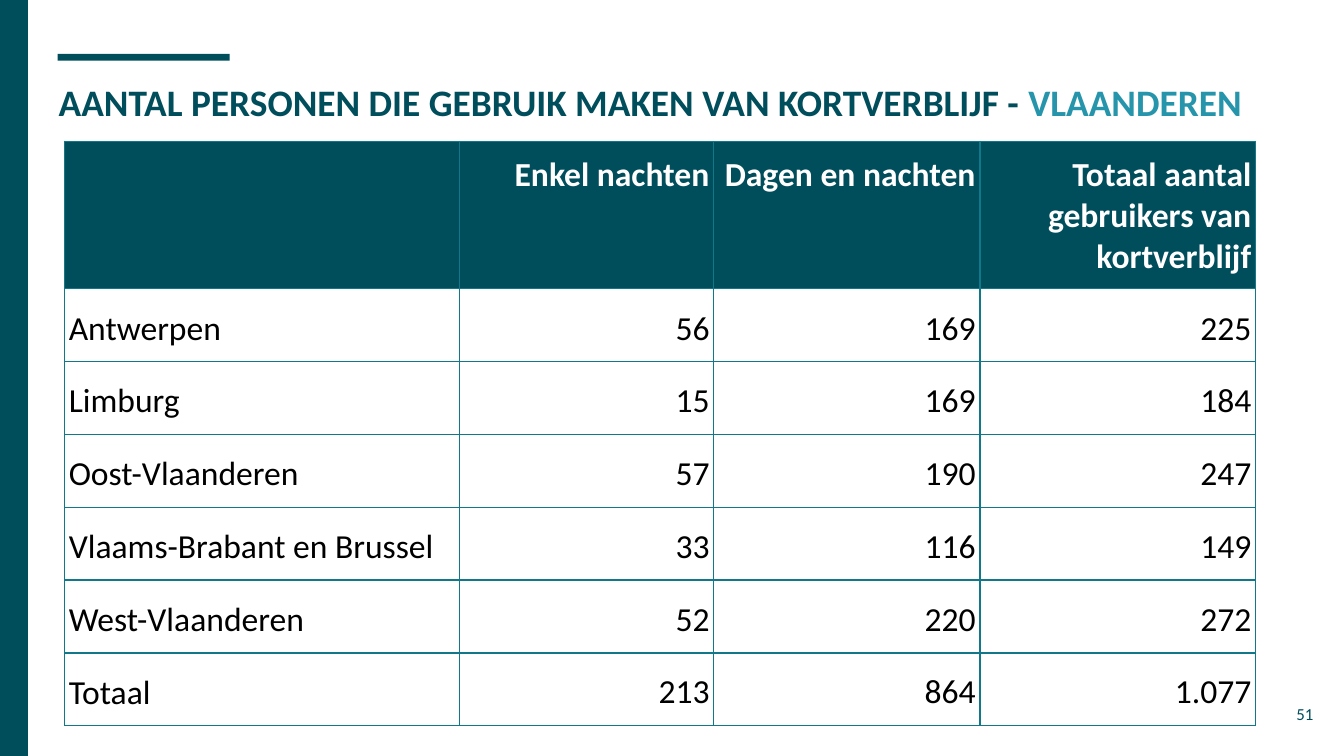
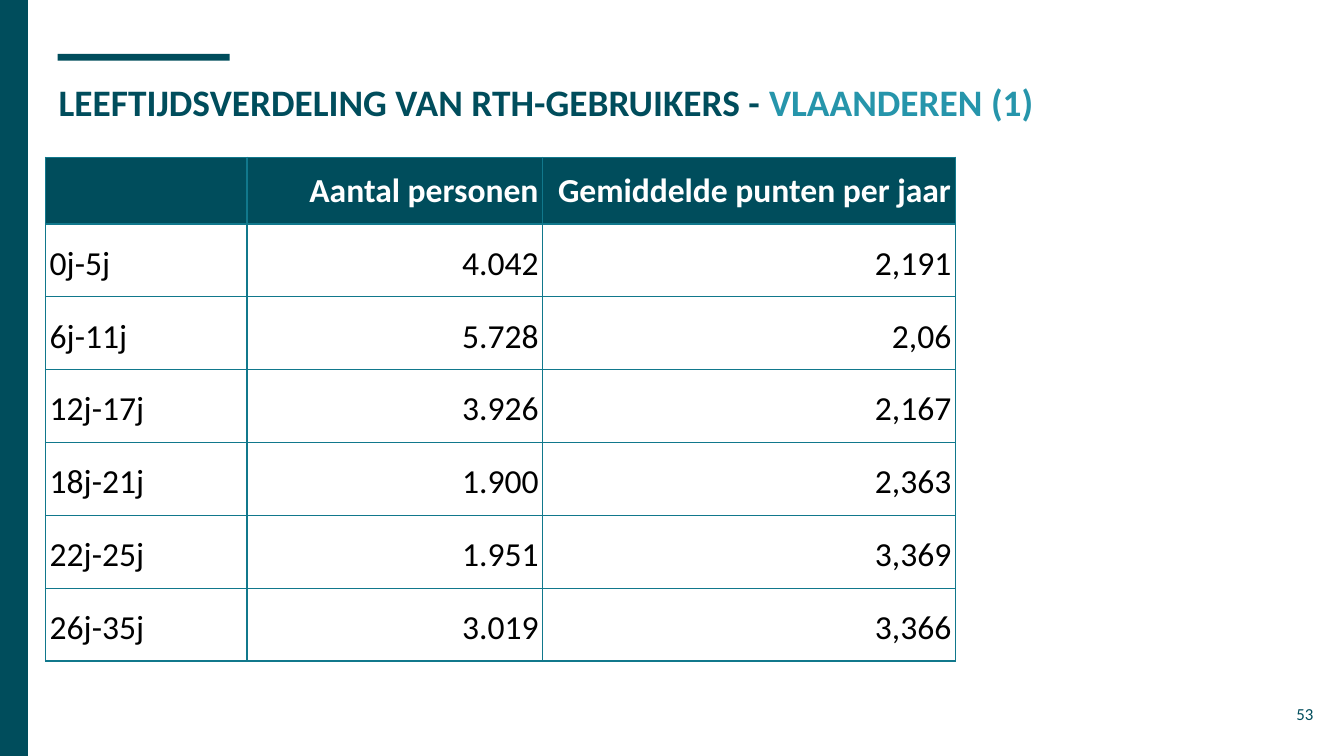
import dataclasses

import lxml.etree
import pptx
import pptx.dml.color
import pptx.enum.shapes
import pptx.enum.text
import pptx.oxml.ns
import pptx.util

Cm = pptx.util.Cm
Pt = pptx.util.Pt
Align = pptx.enum.text.PP_ALIGN
Anchor = pptx.enum.text.MSO_ANCHOR


def colour(code):
    return pptx.dml.color.RGBColor.from_string(code)


@dataclasses.dataclass(frozen=True)
class Theme:
    font: str = "Calibri"
    dark: str = "004D5C"
    accent: str = "2695AB"
    border: str = "11788C"
    white: str = "FFFFFF"
    black: str = "000000"
    title_size: int = 20
    table_size: int = 18
    number_size: int = 9
    border_width: float = 0.75
    line_spacing: float = 1.15


@dataclasses.dataclass(frozen=True)
class Box:
    left: float
    top: float
    width: float
    height: float

    def lengths(self):
        return Cm(self.left), Cm(self.top), Cm(self.width), Cm(self.height)


THEME = Theme()
PAGE = Box(0, 0, 25.4, 14.29)
TITLE_BOX = Box(0.86, 1.24, 23.67, 2.11)
NUMBER_BOX = Box(23.55, 12.95, 1.52, 1.09)


def style_font(font, size, code, bold=False):
    font.name = THEME.font
    font.size = Pt(size)
    font.bold = bold
    font.color.rgb = colour(code)


def add_bar(page, box):
    bar = page.shapes.add_shape(
        pptx.enum.shapes.MSO_SHAPE.RECTANGLE, *box.lengths())
    bar.shadow.inherit = False
    bar.fill.solid()
    bar.fill.fore_color.rgb = colour(THEME.dark)
    bar.line.fill.background()


def add_text_frame(page, box, anchor):
    frame = page.shapes.add_textbox(*box.lengths()).text_frame
    frame.word_wrap = True
    frame.vertical_anchor = anchor
    frame.margin_left = frame.margin_right = Cm(0.25)
    frame.margin_top = frame.margin_bottom = Cm(0.25)
    return frame


def add_decoration(page, box):
    # Short rule above the title, then the band on the left edge
    add_bar(page, Box(box.left + 1.09, box.top + 1.02, 3.25, 0.13))
    add_bar(page, Box(box.left, box.top, 0.53, box.height))


def add_title(page, box, subject, region):
    para = add_text_frame(page, box, Anchor.TOP).paragraphs[0]
    for text, code in ((subject + " - ", THEME.dark), (region, THEME.accent)):
        span = para.add_run()
        span.text = text
        style_font(span.font, THEME.title_size, code, bold=True)


def add_page_number(page, box, number):
    para = add_text_frame(page, box, Anchor.MIDDLE).paragraphs[0]
    para.text = str(number)
    para.alignment = Align.RIGHT
    style_font(para.font, THEME.number_size, THEME.dark)


def add_borders(cell):
    properties = cell._tc.get_or_add_tcPr()
    for position, side in enumerate(("a:lnL", "a:lnR", "a:lnT", "a:lnB")):
        line = lxml.etree.Element(
            pptx.oxml.ns.qn(side), w=str(Pt(THEME.border_width)))
        fill = lxml.etree.SubElement(line, pptx.oxml.ns.qn("a:solidFill"))
        lxml.etree.SubElement(
            fill, pptx.oxml.ns.qn("a:srgbClr"), val=THEME.border)
        properties.insert(position, line)


def fill_cell(cell, text, is_header, is_label):
    cell.margin_left = cell.margin_right = Cm(0.08)
    cell.margin_top = cell.margin_bottom = Cm(0.25)
    para = cell.text_frame.paragraphs[0]
    para.text = text
    para.alignment = Align.LEFT if is_label else Align.RIGHT
    if is_header:
        cell.fill.solid()
        cell.fill.fore_color.rgb = colour(THEME.dark)
        style_font(para.font, THEME.table_size, THEME.white, bold=True)
    else:
        cell.fill.background()
        cell.vertical_anchor = Anchor.BOTTOM
        para.line_spacing = THEME.line_spacing
        style_font(para.font, THEME.table_size, THEME.black)
    add_borders(cell)


def add_data_table(page, left, top, column_widths, row_height, rows):
    box = Box(left, top, sum(column_widths), row_height * len(rows))
    table = page.shapes.add_table(
        len(rows), len(column_widths), *box.lengths()).table
    table.horz_banding = False
    for column, width in zip(table.columns, column_widths):
        column.width = Cm(width)
    for row_index, values in enumerate(rows):
        table.rows[row_index].height = Cm(row_height)
        for column_index, text in enumerate(values):
            fill_cell(table.cell(row_index, column_index), text,
                      row_index == 0, column_index == 0)
    return table


def add_page(deck, subject, region, number):
    page = deck.slides.add_slide(deck.slide_layouts[6])
    add_decoration(page, PAGE)
    add_title(page, TITLE_BOX, subject, region)
    add_page_number(page, NUMBER_BOX, number)
    return page


def add_short_stay_page(deck):
    page = add_page(
        deck, "AANTAL PERSONEN DIE GEBRUIK MAKEN VAN KORTVERBLIJF",
        "VLAANDEREN", 51)
    table = add_data_table(page, 1.22, 2.67, (7.47, 4.8, 5.03, 5.21), 1.24, (
        ("", "Enkel nachten", "Dagen en nachten",
         "Totaal aantal gebruikers van kortverblijf"),
        ("Antwerpen", "56", "169", "225"),
        ("Limburg", "15", "169", "184"),
        ("Oost-Vlaanderen", "57", "190", "247"),
        ("Vlaams-Brabant en Brussel", "33", "116", "149"),
        ("West-Vlaanderen", "52", "220", "272"),
        ("Totaal", "213", "864", "1.077"),
    ))
    # The totals keep single line spacing
    for cell in list(table.rows[6].cells)[1:]:
        cell.text_frame.paragraphs[0].line_spacing = None


def add_age_page(deck):
    page = add_page(
        deck, "LEEFTIJDSVERDELING VAN RTH-GEBRUIKERS", "VLAANDEREN (1)", 53)
    add_data_table(page, 0.86, 2.97, (3.81, 5.59, 7.8), 0.95, (
        ("", "Aantal personen", "Gemiddelde punten per jaar"),
        ("0j-5j", "4.042", "2,191"),
        ("6j-11j", "5.728", "2,06"),
        ("12j-17j", "3.926", "2,167"),
        ("18j-21j", "1.900", "2,363"),
        ("22j-25j", "1.951", "3,369"),
        ("26j-35j", "3.019", "3,366"),
    ))


def main():
    deck = pptx.Presentation()
    deck.slide_width = Cm(PAGE.width)
    deck.slide_height = Cm(PAGE.height)
    add_short_stay_page(deck)
    add_age_page(deck)
    deck.save("out.pptx")


if __name__ == "__main__":
    main()
